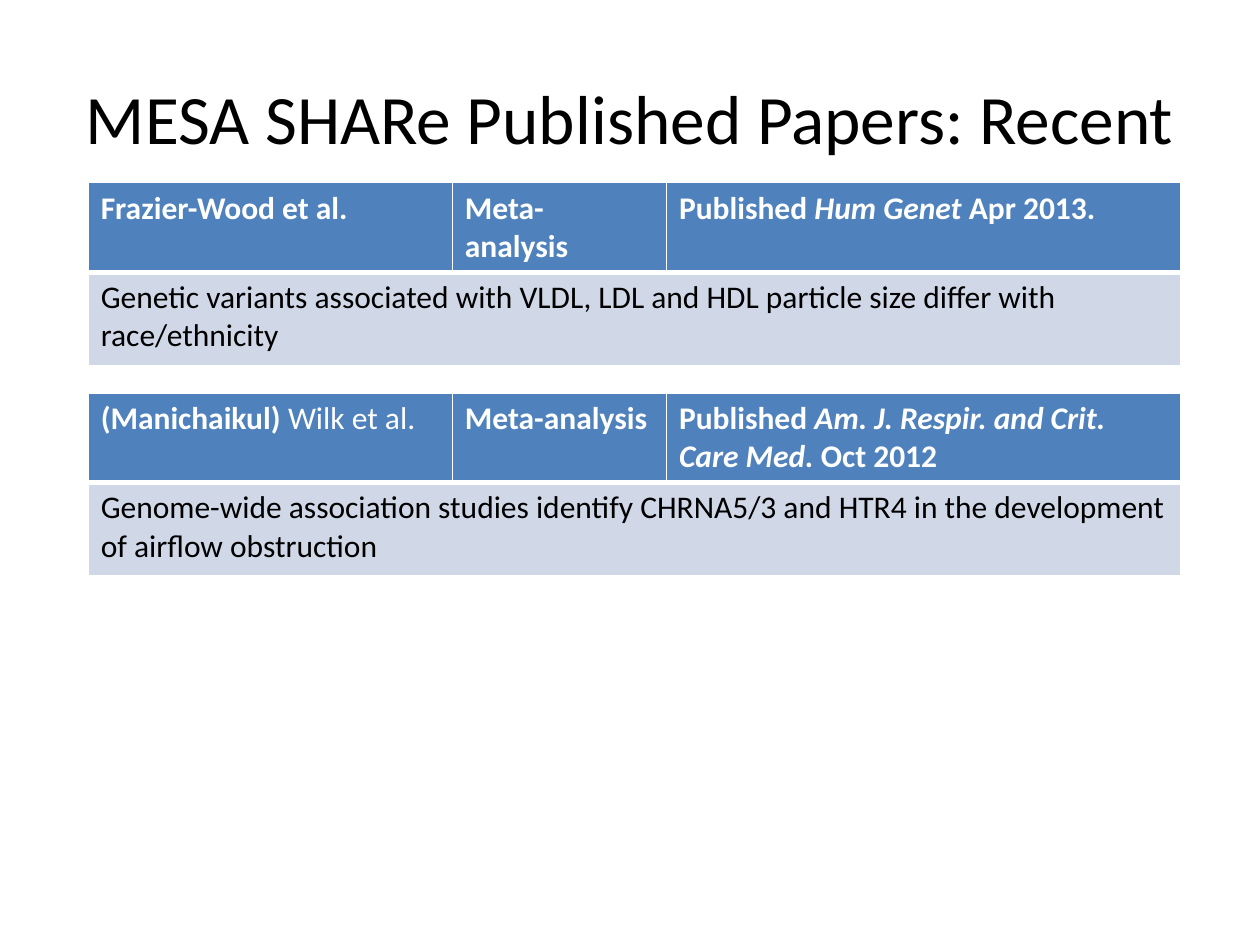
from dataclasses import dataclass

from lxml import etree
from pptx import Presentation
from pptx.dml.color import RGBColor
from pptx.enum.text import MSO_ANCHOR, PP_ALIGN
from pptx.oxml.ns import qn
from pptx.util import Inches, Pt

MIDDLE = MSO_ANCHOR.MIDDLE
CENTER = PP_ALIGN.CENTER
TITLE_ONLY = 5

FONT = "Calibri"
COLORS = {
    "header": "4F81BD",
    "body": "D0D8E8",
    "light": "FFFFFF",
    "dark": "000000",
}
TABLE_LEFT, FIRST_TOP, TABLE_STEP = 0.7, 1.45, 1.67
COLUMN_WIDTHS = (2.89, 1.7, 4.08)
ROW_HEIGHTS = (0.7, 0.74)
THIN, THICK = 1, 3


@dataclass(frozen=True)
class TextRun:
    text: str
    bold: bool = True
    italic: bool = False


@dataclass(frozen=True)
class Paper:
    authors: tuple[TextRun, ...]
    study: str
    journal: str
    date: str
    title: str


PAPERS = (
    Paper(
        (TextRun("Frazier-Wood et al."),),
        "Meta- analysis",
        "Hum Genet",
        " Apr 2013.",
        "Genetic variants associated with VLDL, LDL and HDL particle size "
        "differ with race/ethnicity",
    ),
    Paper(
        (TextRun("(Manichaikul) "), TextRun("Wilk et al.", bold=False)),
        "Meta-analysis",
        "Am. J. Respir. and Crit. Care Med.",
        " Oct 2012",
        "Genome-wide association studies identify CHRNA5/3 and HTR4 in the "
        "development of airflow obstruction",
    ),
)


def add_run(paragraph, content: TextRun, size: float, color: str) -> None:
    run = paragraph.add_run()
    run.text = content.text
    run.font.name = FONT
    run.font.size = Pt(size)
    run.font.bold = content.bold
    run.font.italic = content.italic
    run.font.color.rgb = RGBColor.from_string(COLORS[color])


def set_borders(cell, top: float, bottom: float) -> None:
    """Draw white cell borders; their lines must precede the fill in the XML."""
    properties = cell._tc.get_or_add_tcPr()
    sides = (("lnL", THIN), ("lnR", THIN), ("lnT", top), ("lnB", bottom))
    for index, (tag, width) in enumerate(sides):
        line = etree.Element(qn(f"a:{tag}"), w=str(Pt(width)))
        fill = etree.SubElement(line, qn("a:solidFill"))
        etree.SubElement(fill, qn("a:srgbClr"), val=COLORS["light"])
        properties.insert(index, line)


def fill_cell(cell, runs: tuple[TextRun, ...], fill: str, color: str) -> None:
    cell.fill.solid()
    cell.fill.fore_color.rgb = RGBColor.from_string(COLORS[fill])
    for content in runs:
        add_run(cell.text_frame.paragraphs[0], content, 18, color)


def add_paper(slide, paper: Paper, position: int) -> None:
    table = slide.shapes.add_table(
        len(ROW_HEIGHTS), len(COLUMN_WIDTHS),
        Inches(TABLE_LEFT), Inches(FIRST_TOP + position * TABLE_STEP),
        Inches(sum(COLUMN_WIDTHS)), Inches(sum(ROW_HEIGHTS)),
    ).table
    for column, width in zip(table.columns, COLUMN_WIDTHS):
        column.width = Inches(width)
    for row, height in zip(table.rows, ROW_HEIGHTS):
        row.height = Inches(height)

    publication = (
        TextRun("Published "), TextRun(paper.journal, italic=True), TextRun(paper.date)
    )
    headers = (paper.authors, (TextRun(paper.study),), publication)
    for column, runs in enumerate(headers):
        fill_cell(table.cell(0, column), runs, "header", "light")
        set_borders(table.cell(0, column), THIN, THICK)
        set_borders(table.cell(1, column), THICK, THIN)
    table.cell(0, 2).text_frame.paragraphs[0].space_after = Pt(6)

    body = table.cell(1, 0)
    body.merge(table.cell(1, len(COLUMN_WIDTHS) - 1))
    fill_cell(body, (TextRun(paper.title, bold=False),), "body", "dark")


def add_title(slide, text: str) -> None:
    title = slide.shapes.title
    title.left, title.top = Inches(0.5), Inches(0.3)
    title.width, title.height = Inches(9), Inches(1.25)
    title.text_frame.vertical_anchor = MIDDLE
    paragraph = title.text_frame.paragraphs[0]
    paragraph.alignment = CENTER
    add_run(paragraph, TextRun(text, bold=False), 39.6, "dark")


def main() -> None:
    presentation = Presentation()
    presentation.slide_width = Inches(10)
    presentation.slide_height = Inches(7.5)
    slide = presentation.slides.add_slide(presentation.slide_layouts[TITLE_ONLY])
    add_title(slide, "MESA SHARe Published Papers: Recent")
    for position, paper in enumerate(PAPERS):
        add_paper(slide, paper, position)
    presentation.save("out.pptx")


if __name__ == "__main__":
    main()
